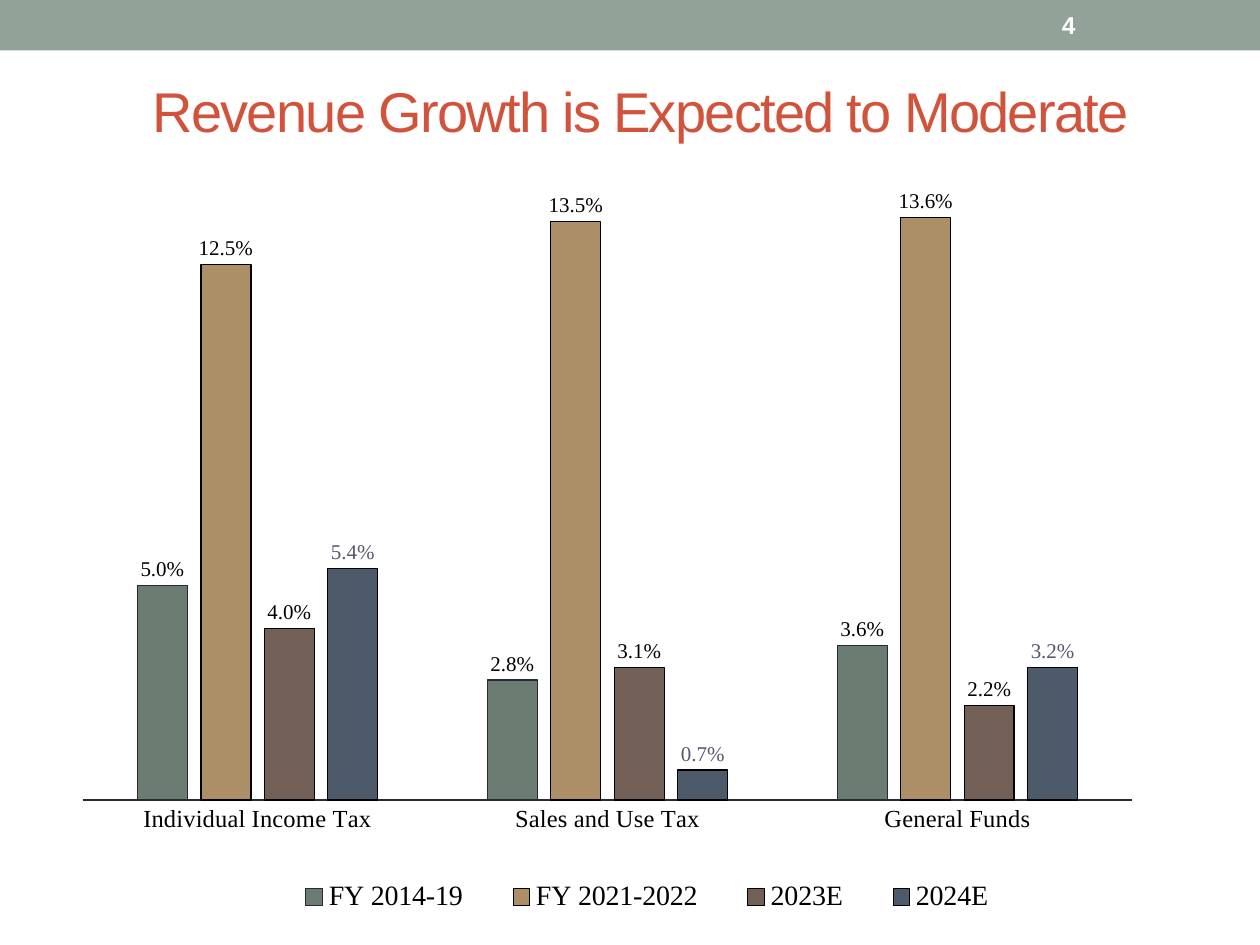
from lxml.etree import SubElement
from pptx import Presentation
from pptx.chart.data import CategoryChartData
from pptx.dml.color import RGBColor
from pptx.enum.chart import (XL_CHART_TYPE, XL_LABEL_POSITION, XL_LEGEND_POSITION,
                             XL_TICK_LABEL_POSITION, XL_TICK_MARK)
from pptx.enum.shapes import MSO_SHAPE
from pptx.enum.text import MSO_ANCHOR, PP_ALIGN
from pptx.oxml.ns import qn
from pptx.util import Inches, Pt

COLORS = {
    "band": "93A299", "title": "D2533C", "white": "FFFFFF", "black": "000000",
    "dark": "292934", "muted": "57576E",
    "sage": "6B7D72", "tan": "AD8F67", "brown": "726056", "slate": "4C5A6A",
}
SANS, SERIF = "Arial", "Times New Roman"
CATEGORIES = ["Individual Income Tax", "Sales and Use Tax", "General Funds"]
SERIES = [
    ("FY 2014-19", (0.05, 0.028, 0.036), "sage", "dark", "black"),
    ("FY 2021-2022", (0.125, 0.135, 0.136), "tan", "black", "black"),
    ("2023E", (0.04, 0.031, 0.022), "brown", "black", "black"),
    ("2024E", (0.054, 0.007, 0.031), "slate", "black", "muted"),
]


def rgb(name):
    """Return the named palette colour."""
    return RGBColor.from_string(COLORS[name])


def style_font(font, size, color, name, bold=False):
    """Set size, colour, typeface and weight of a font."""
    font.size, font.name, font.bold = Pt(size), name, bold
    font.color.rgb = rgb(color)


def add_text(slide, box, text, size, color, align, bold=False):
    """Add a one-line, vertically centred text box and return its run."""
    frame = slide.shapes.add_textbox(*map(Inches, box)).text_frame
    frame.word_wrap = True
    frame.vertical_anchor = MSO_ANCHOR.MIDDLE
    paragraph = frame.paragraphs[0]
    paragraph.alignment = align
    run = paragraph.add_run()
    run.text = text
    style_font(run.font, size, color, SANS, bold)
    return run


def add_header(slide, box):
    """Draw the top band with the slide number near its right end."""
    left, top, width, height = box
    band = slide.shapes.add_shape(MSO_SHAPE.RECTANGLE, *map(Inches, box))
    band.shadow.inherit = False
    band.fill.solid()
    band.fill.fore_color.rgb = rgb("band")
    band.line.fill.background()
    number_box = (left + width - 1.67, top + 0.02, 1.17, height - 0.04)
    add_text(slide, number_box, "4", 14, "white", PP_ALIGN.LEFT, bold=True)


def add_title(slide, box):
    """Add the centred title with tightened letter spacing."""
    run = add_text(slide, box, "Revenue Growth is Expected to Moderate", 32, "title", PP_ALIGN.CENTER)
    run.font._element.set("spc", "-100")


def set_layout(parent, index, box, inner=False):
    """Place a chart part by fractions of the chart area."""
    for old_layout in parent.findall(qn("c:layout")):
        parent.remove(old_layout)
    layout = SubElement(parent, qn("c:layout"))
    parent.insert(index, layout)
    manual = SubElement(layout, qn("c:manualLayout"))
    settings = [("layoutTarget", "inner")] if inner else []
    settings += [("xMode", "edge"), ("yMode", "edge"), *zip("xywh", box)]
    for tag, value in settings:
        SubElement(manual, qn(f"c:{tag}")).set("val", str(value))


def style_axes(chart):
    """Show only the category line and names."""
    category_axis, value_axis = chart.category_axis, chart.value_axis
    category_axis.major_tick_mark = XL_TICK_MARK.NONE
    category_axis.format.line.color.rgb = rgb("dark")
    category_axis.format.line.width = Pt(0.75)
    style_font(category_axis.tick_labels.font, 14, "black", SERIF)
    value_axis.minimum_scale, value_axis.maximum_scale = 0, 0.14
    value_axis.major_unit = 0.1
    value_axis.has_major_gridlines = False
    value_axis.tick_label_position = XL_TICK_LABEL_POSITION.NONE
    value_axis.format.line.fill.background()


def style_series(series, fill, outline, label_color):
    """Colour one series and label its columns."""
    series.format.fill.solid()
    series.format.fill.fore_color.rgb = rgb(fill)
    series.format.line.color.rgb = rgb(outline)
    series.format.line.width = Pt(0.75)
    labels = series.data_labels
    labels.show_value = True
    labels.position = XL_LABEL_POSITION.OUTSIDE_END
    labels.number_format, labels.number_format_is_linked = "0.0%", False
    style_font(labels.font, 12, label_color, SERIF)


def add_growth_chart(slide, box):
    """Add the clustered column chart of growth by revenue source."""
    data = CategoryChartData(number_format="0.0%")
    data.categories = CATEGORIES
    for name, values, *_ in SERIES:
        data.add_series(name, values)
    chart = slide.shapes.add_chart(XL_CHART_TYPE.COLUMN_CLUSTERED, *map(Inches, box), data).chart
    chart.has_title = False
    style_font(chart.font, 10, "dark", SANS)
    plot = chart.plots[0]
    plot.gap_width, plot.overlap, plot.vary_by_categories = 219, -27, False
    for series, (_, _, *colors) in zip(plot.series, SERIES):
        style_series(series, *colors)

    last_label = plot.series[-1].points[2].data_label
    run = last_label.text_frame.paragraphs[0].add_run()
    run.text = "3.2%"
    style_font(run.font, 12, "muted", SERIF)
    last_label.position = XL_LABEL_POSITION.OUTSIDE_END

    style_axes(chart)
    chart.has_legend = True
    chart.legend.position = XL_LEGEND_POSITION.BOTTOM
    chart.legend.include_in_layout = False
    style_font(chart.legend.font, 16, "black", SERIF)
    set_layout(chart._chartSpace.chart.plotArea, 0, (0.035, 0.056, 0.893, 0.783), inner=True)
    set_layout(chart.legend._element, 1, (0.19, 0.94, 0.65, 0.05))


def main():
    """Build and save the slide."""
    presentation = Presentation()
    presentation.slide_width, presentation.slide_height = Inches(10), Inches(7.5)
    slide = presentation.slides.add_slide(presentation.slide_layouts[6])
    add_header(slide, (0, 0, 10, 0.4))
    add_title(slide, (0.5, 0.5, 9.17, 0.75))
    add_growth_chart(slide, (0.33, 1.25, 9.33, 6.08))
    presentation.save("out.pptx")


if __name__ == "__main__":
    main()
